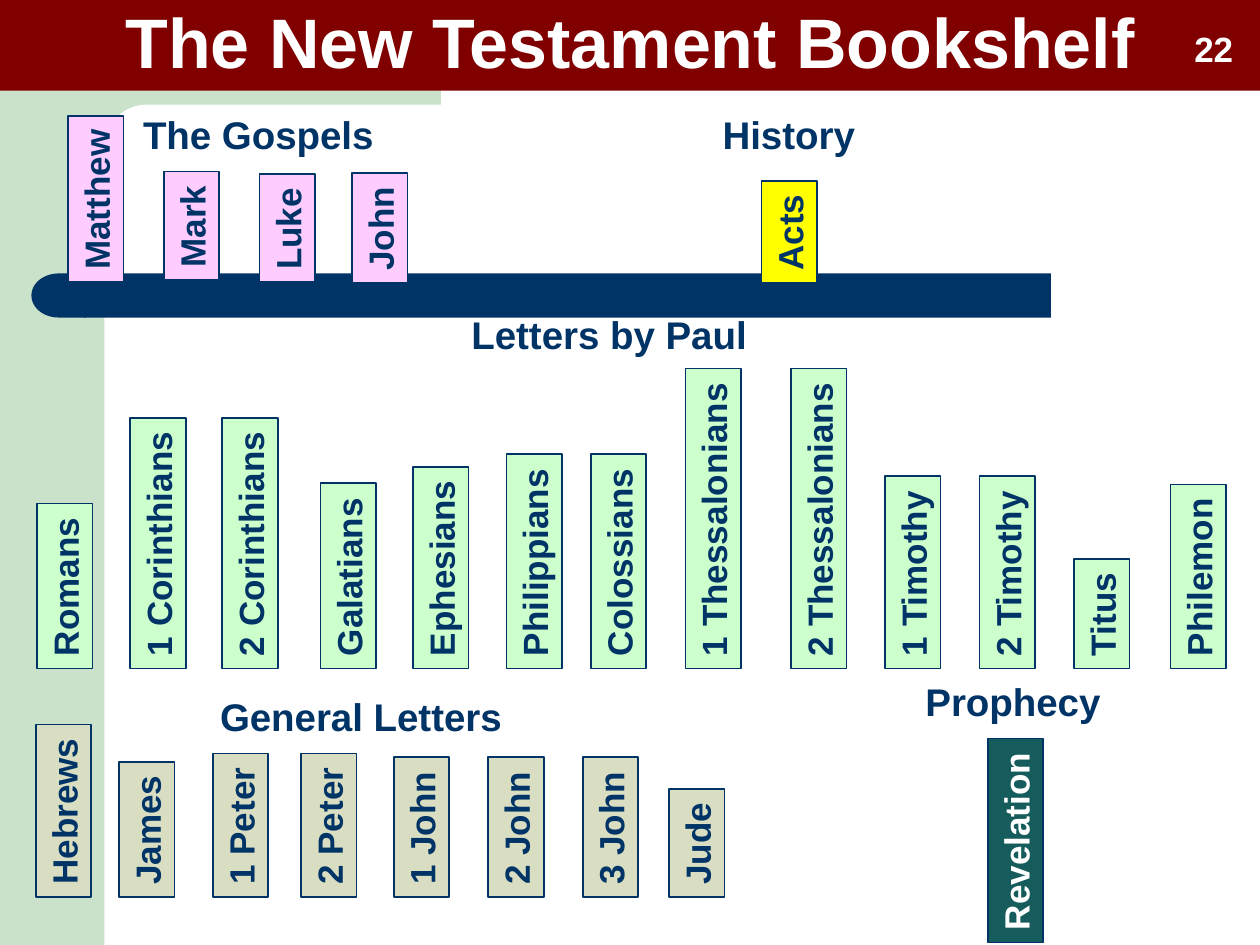
import pptx
import pptx.util
import pptx.dml.color
import pptx.enum.shapes
import pptx.enum.text

COLORS = {
    "sage": "CAE2CA", "white": "FFFFFF", "navy": "003366", "maroon": "800000",
    "yellow": "FFFF00", "pink": "FFCCFF", "mint": "CCFFCC",
    "khaki": "D9DDC1", "teal": "175C5C",
}
COLUMNS, ROWS = 100, 75
SPINE_WIDTH = 4.4
KINDS = pptx.enum.shapes.MSO_SHAPE
ANCHORS = pptx.enum.text.MSO_ANCHOR
FITS = pptx.enum.text.MSO_AUTO_SIZE
ALIGNMENTS = pptx.enum.text.PP_ALIGN

GOSPELS = [("Matthew", 7.6, 13.2, 22.4), ("Mark", 15.2, 8.6, 22.2),
           ("Luke", 22.8, 8.6, 22.4), ("John", 30.15, 8.7, 22.45)]
PAUL_LETTERS = [
    ("Romans", 5.15, 13.1), ("1 Corinthians", 12.55, 19.9),
    ("2 Corinthians", 19.85, 19.9), ("Galatians", 27.65, 14.7),
    ("Ephesians", 35, 16), ("Philippians", 42.4, 17),
    ("Colossians", 49.1, 17), ("1 Thessalonians", 56.6, 23.8),
    ("2 Thessalonians", 65, 23.8), ("1 Timothy", 72.45, 15.3),
    ("2 Timothy", 79.95, 15.3), ("Titus", 87.45, 8.7), ("Philemon", 95.1, 14.6),
]
GENERAL_LETTERS = [
    ("Hebrews", 5.05, 13.7), ("James", 11.65, 10.7), ("1 Peter", 19.1, 11.4),
    ("2 Peter", 26.1, 11.4), ("1 John", 33.45, 11.1), ("2 John", 40.95, 11.1),
    ("3 John", 48.45, 11.1), ("Jude", 55.3, 8.6),
]
HEADINGS = [
    ("The Gospels", 9.9, 8.3, 21.2), ("History", 54.2, 8.3, 16.8),
    ("Letters by Paul", 25, 24.2, 46.7), ("General Letters", 10.6, 54.5, 36.1),
    ("Prophecy", 72.1, 53.3, 16.6),
]


class Bookshelf:
    def __init__(self):
        self.deck = pptx.Presentation()
        self.deck.slide_width = pptx.util.Inches(10)
        self.deck.slide_height = pptx.util.Inches(7.5)
        self.page = self.deck.slides.add_slide(self.deck.slide_layouts[6])
        self.font = "Arial"

    def color(self, name):
        return pptx.dml.color.RGBColor.from_string(COLORS[name])

    def place(self, left, top, width, height):
        column = self.deck.slide_width / COLUMNS
        row = self.deck.slide_height / ROWS
        return [int(round(length)) for length in
                (left * column, top * row, width * column, height * row)]

    def letter(self, box, text, size, color, alignment, anchor, wrap=False):
        frame = box.text_frame
        frame.text = text
        frame.word_wrap = wrap
        frame.vertical_anchor = anchor
        para = frame.paragraphs[0]
        para.alignment = alignment
        span = para.runs[0]
        span.font.name = self.font
        span.font.size = pptx.util.Pt(size)
        span.font.bold = True
        span.font.color.rgb = self.color(color)

    def block(self, kind, area, fill, rounding=None):
        shape = self.page.shapes.add_shape(kind, *self.place(*area))
        shape.shadow.inherit = False
        shape.fill.solid()
        shape.fill.fore_color.rgb = self.color(fill)
        shape.line.fill.background()
        if rounding is not None:
            shape.adjustments[0] = rounding
        return shape

    def shelf_end(self, area, fill):
        shape = self.block(KINDS.FLOWCHART_DELAY, area, fill)
        shape.element.spPr.xfrm.set("flipH", "1")

    def book(self, name, center, height, bottom, fill, color="navy"):
        middle = bottom - height / 2
        area = (center - height / 2, middle - SPINE_WIDTH / 2, height, SPINE_WIDTH)
        spine = self.block(KINDS.RECTANGLE, area, fill)
        spine.rotation = 270
        spine.line.color.rgb = self.color("navy")
        spine.line.width = pptx.util.Pt(1)
        self.letter(spine, name, 20, color, ALIGNMENTS.LEFT, ANCHORS.MIDDLE)
        spine.text_frame.auto_size = FITS.SHAPE_TO_FIT_TEXT

    def label(self, text, area, size, color, alignment):
        box = self.page.shapes.add_textbox(*self.place(*area))
        self.letter(box, text, size, color, alignment, ANCHORS.TOP, wrap=True)

    def title(self, text, area):
        banner = self.block(KINDS.RECTANGLE, area, "maroon")
        self.letter(banner, text, 40, "white", ALIGNMENTS.CENTER, ANCHORS.MIDDLE, wrap=True)
        banner.text_frame.paragraphs[0].line_spacing = 0.9


def main():
    shelf = Bookshelf()
    shelf.block(KINDS.RECTANGLE, (0, 0, 8.3, 75), "sage")
    shelf.block(KINDS.RECTANGLE, (7.5, 0, 27.5, 11.7), "sage")
    shelf.block(KINDS.ROUNDED_RECTANGLE, (8.3, 8.3, 55.8, 6.7), "white", 0.5)
    shelf.block(KINDS.ROUNDED_RECTANGLE, (6.7, 21.7, 76.7, 3.5), "navy", 0)
    shelf.shelf_end((2.5, 21.7, 4.3, 3.5), "navy")

    shelf.book("Acts", 62.65, 8.1, 22.45, "yellow")
    for name, center, height, bottom in GOSPELS:
        shelf.book(name, center, height, bottom, "pink")
    for name, center, height in PAUL_LETTERS:
        shelf.book(name, center, height, 53.05, "mint")
    for name, center, height in GENERAL_LETTERS:
        shelf.book(name, center, height, 71.2, "khaki")
    shelf.book("Revelation", 80.6, 16.2, 74.8, "teal", "white")

    for text, left, top, width in HEADINGS:
        shelf.label(text, (left, top, width, 4.7), 22, "navy", ALIGNMENTS.CENTER)
    shelf.title("The New Testament Bookshelf", (0, 0, 100, 7.2))
    shelf.label("22", (93.8, 1.7, 5.1, 4.4), 20, "white", ALIGNMENTS.LEFT)
    shelf.deck.save("out.pptx")


if __name__ == "__main__":
    main()
